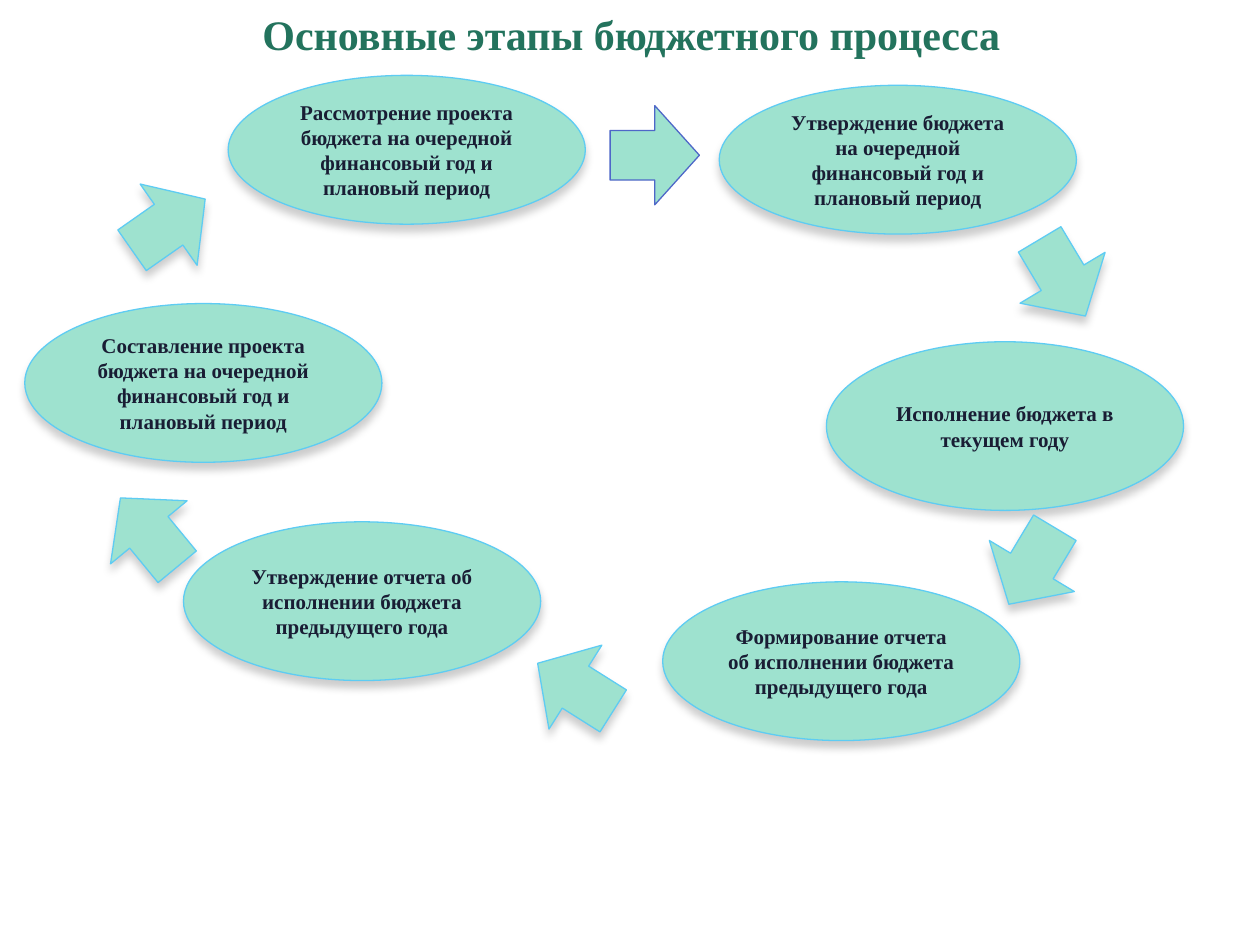
import dataclasses

import pptx
import pptx.dml.color
import pptx.enum.shapes
import pptx.enum.text
import pptx.oxml.ns
import pptx.util
from lxml import etree
from pptx.util import Cm


@dataclasses.dataclass(frozen=True)
class Theme:
    font: str = "Times New Roman"
    title_size: int = 24
    stage_size: int = 12
    title_color: str = "23735D"
    text_color: str = "191D34"
    fill: str = "9EE2CF"
    outline: str = "5ECCF3"
    accent_outline: str = "4E67C8"
    shadow: str = "000000"
    line_width: float = 0.75


STAGE_WIDTH = 7.2
ARROW_WIDTH, ARROW_HEIGHT = 1.8, 2.0

# Text, left, top, height (cm), clockwise around the cycle
STAGES = [
    ("Составление проекта бюджета на очередной финансовый год и плановый период", 0.5, 6.12, 3.2),
    ("Рассмотрение проекта бюджета на очередной финансовый год и плановый период", 4.6, 1.52, 3.0),
    ("Утверждение бюджета на очередной финансовый год и плановый период", 14.5, 1.72, 3.0),
    ("Исполнение бюджета в текущем году", 16.66, 6.89, 3.4),
    ("Формирование отчета об исполнении бюджета предыдущего года", 13.36, 11.73, 3.2),
    ("Утверждение отчета об исполнении бюджета предыдущего года", 3.7, 10.52, 3.2),
]

# Left, top (cm), rotation (degrees)
ARROWS = [
    (2.5, 3.53, 325),
    (20.52, 4.6, 59.1),
    (19.9, 10.41, 121),
    (10.7, 12.85, 212.2),
    (2.1, 9.73, 230.5),
]


class SlideBuilder:
    """Holds the theme and the slide that its methods add to."""

    def __init__(self, slide, theme):
        self.slide = slide
        self.theme = theme

    def style_text(self, frame, text, size, color):
        frame.text = text
        frame.word_wrap = True
        frame.vertical_anchor = pptx.enum.text.MSO_ANCHOR.MIDDLE
        paragraph = frame.paragraphs[0]
        paragraph.alignment = pptx.enum.text.PP_ALIGN.CENTER
        paragraph.font.name = self.theme.font
        paragraph.font.size = pptx.util.Pt(size)
        paragraph.font.bold = True
        paragraph.font.color.rgb = pptx.dml.color.RGBColor.from_string(color)

    def title(self, text, left, top, width, height):
        heading = self.slide.shapes.title
        heading.left, heading.top = Cm(left), Cm(top)
        heading.width, heading.height = Cm(width), Cm(height)
        self.style_text(heading.text_frame, text, self.theme.title_size, self.theme.title_color)

    def drop_shadow(self, shape):
        """Add a soft shadow straight below the shape."""
        effects = shape._element.spPr.find(pptx.oxml.ns.qn("a:effectLst"))
        shadow = etree.SubElement(
            effects, pptx.oxml.ns.qn("a:outerShdw"),
            blurRad=str(pptx.util.Pt(5)), dist=str(pptx.util.Pt(4)),
            dir=str(90 * 60000), rotWithShape="0")
        color = etree.SubElement(shadow, pptx.oxml.ns.qn("a:srgbClr"), val=self.theme.shadow)
        etree.SubElement(color, pptx.oxml.ns.qn("a:alpha"), val="20000")

    def figure(self, kind, left, top, width, height, outline, shadow=True):
        shape = self.slide.shapes.add_shape(kind, Cm(left), Cm(top), Cm(width), Cm(height))
        shape.fill.solid()
        shape.fill.fore_color.rgb = pptx.dml.color.RGBColor.from_string(self.theme.fill)
        shape.line.color.rgb = pptx.dml.color.RGBColor.from_string(outline)
        shape.line.width = pptx.util.Pt(self.theme.line_width)
        shape.shadow.inherit = False
        if shadow:
            self.drop_shadow(shape)
        return shape

    def stage(self, text, left, top, height):
        oval = self.figure(pptx.enum.shapes.MSO_SHAPE.OVAL, left, top,
                           STAGE_WIDTH, height, self.theme.outline)
        self.style_text(oval.text_frame, text, self.theme.stage_size, self.theme.text_color)

    def arrow(self, left, top, rotation=0, outline=None, shadow=True):
        arrow = self.figure(pptx.enum.shapes.MSO_SHAPE.RIGHT_ARROW, left, top,
                            ARROW_WIDTH, ARROW_HEIGHT, outline or self.theme.outline, shadow)
        arrow.rotation = rotation


def main():
    presentation = pptx.Presentation()
    presentation.slide_width, presentation.slide_height = Cm(25.4), Cm(19.05)
    theme = Theme()
    title_only = presentation.slide_layouts[5]
    builder = SlideBuilder(presentation.slides.add_slide(title_only), theme)

    builder.title("Основные этапы бюджетного процесса", 1.3, 0, 22.86, 1.37)
    for stage in STAGES:
        builder.stage(*stage)
    builder.arrow(12.3, 2.13, outline=theme.accent_outline, shadow=False)
    for arrow in ARROWS:
        builder.arrow(*arrow)

    presentation.save("out.pptx")


if __name__ == "__main__":
    main()
